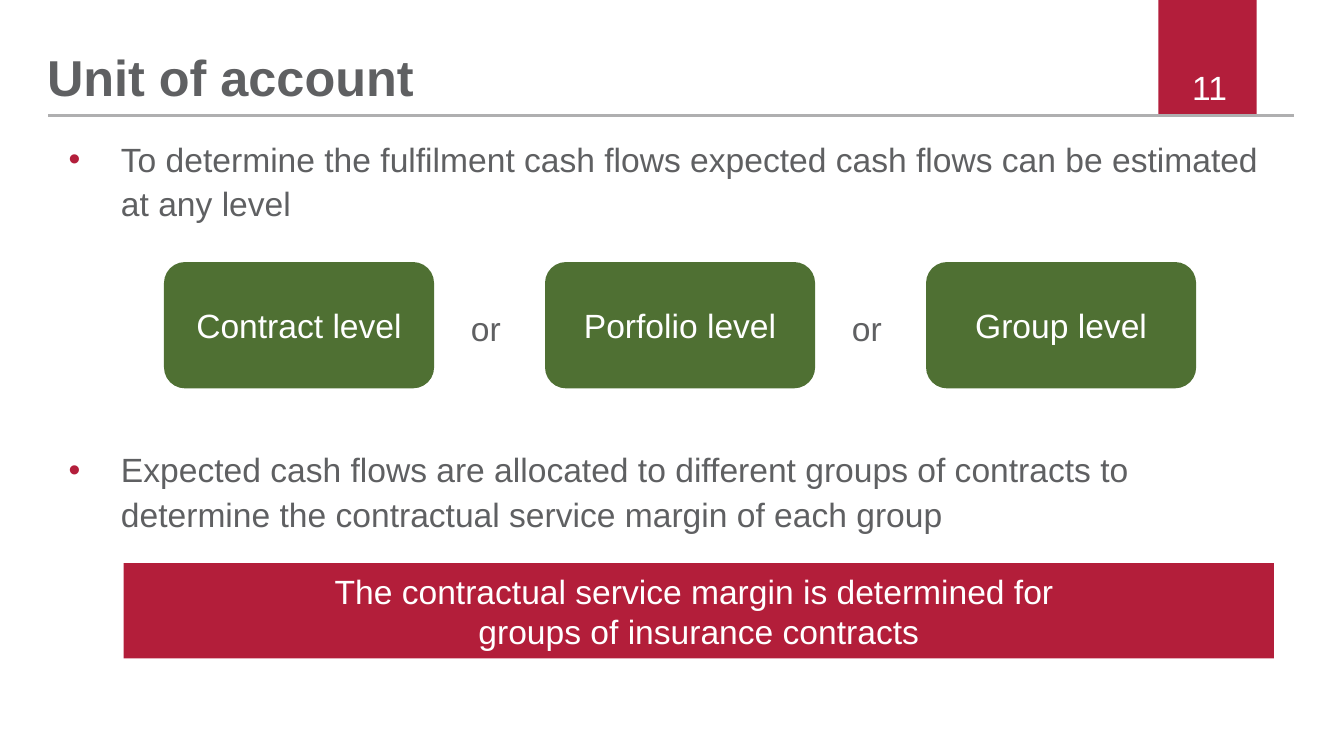
from lxml import etree
from pptx import Presentation
from pptx.dml.color import RGBColor
from pptx.enum.shapes import MSO_CONNECTOR, MSO_SHAPE
from pptx.enum.text import MSO_ANCHOR, MSO_AUTO_SIZE, PP_ALIGN
from pptx.oxml.ns import qn
from pptx.util import Inches, Pt

RECTANGLE, ROUNDED = MSO_SHAPE.RECTANGLE, MSO_SHAPE.ROUNDED_RECTANGLE
LEFT, CENTER, RIGHT = PP_ALIGN.LEFT, PP_ALIGN.CENTER, PP_ALIGN.RIGHT
TOP, MIDDLE, BOTTOM = MSO_ANCHOR.TOP, MSO_ANCHOR.MIDDLE, MSO_ANCHOR.BOTTOM

SLIDE_WIDTH = 10
SLIDE_HEIGHT = SLIDE_WIDTH * 9 / 16

COLORS = {"red": "B31E3B", "banner": "B31E3A", "green": "4F7033",
          "text": "5F6062", "rule": "AFAFB0", "white": "FFFFFF"}
FONT, TEXT_SIZE, TITLE_SIZE = "Arial", 18, 27

LEVELS = ["Contract level", "Porfolio level", "Group level"]
BULLETS = [
    "To determine the fulfilment cash flows expected cash flows can be "
    "estimated at any level",
    "Expected cash flows are allocated to different groups of contracts to "
    "determine the contractual service margin of each group",
]
BULLET_SPACE_BEFORE = [0, 113]  # the second bullet sits below the boxes
BANNER = ["The contractual service margin is determined for ",
          "groups of insurance contracts"]

# Grid of the level boxes, in inches
FIRST_LEFT, LAST_LEFT, GRID_TOP = 1.22, 6.89, 1.95
COLUMN_STEP = (LAST_LEFT - FIRST_LEFT) / (len(LEVELS) - 1)
BOX_WIDTH, BOX_HEIGHT = 2.01, 0.94
OR_OFFSET, OR_TOP = 2.13, 2.24


def color(name):
    return RGBColor.from_string(COLORS[name])


def place(shape, left, top, width, height):
    shape.left, shape.top = Inches(left), Inches(top)
    shape.width, shape.height = Inches(width), Inches(height)


def write(shape, lines, color_name, size=TEXT_SIZE, align=LEFT, anchor=TOP,
          insets=(0, 0), bold=False):
    """Fill a shape with one paragraph per line and return the paragraphs."""
    frame = shape.text_frame
    frame.text = "\n".join(lines)
    frame.word_wrap = True
    frame.auto_size = MSO_AUTO_SIZE.NONE
    frame.vertical_anchor = anchor
    frame.margin_left = frame.margin_right = Inches(insets[0])
    frame.margin_top = frame.margin_bottom = Inches(insets[1])
    for paragraph in frame.paragraphs:
        paragraph.alignment = align
        font = paragraph.font
        font.name, font.size, font.bold = FONT, Pt(size), bold
        font.color.rgb = color(color_name)
    return frame.paragraphs


def add_bullet(paragraph):
    properties = paragraph._p.get_or_add_pPr()
    properties.set("marL", str(Inches(0.39)))
    properties.set("indent", str(-Inches(0.39)))
    bullet_color = etree.Element(qn("a:buClr"))
    etree.SubElement(bullet_color, qn("a:srgbClr"), val=COLORS["red"])
    bullet_font = etree.Element(qn("a:buFont"), typeface=FONT)
    bullet = etree.Element(qn("a:buChar"), char="•")
    # Bullet elements come before the default run properties
    for position, element in enumerate((bullet_color, bullet_font, bullet)):
        properties.insert(position, element)


def add_block(slide, kind, fill, left, top, width, height, lines=()):
    shape = slide.shapes.add_shape(kind, 0, 0, 0, 0)
    place(shape, left, top, width, height)
    shape.shadow.inherit = False
    shape.fill.solid()
    shape.fill.fore_color.rgb = color(fill)
    shape.line.fill.background()
    if lines:
        write(shape, lines, "white", align=CENTER, anchor=MIDDLE,
              insets=(0.07, 0.04))


def add_label(slide, text, color_name, left, top, width, height, **style):
    box = slide.shapes.add_textbox(0, 0, 0, 0)
    place(box, left, top, width, height)
    write(box, [text], color_name, **style)


def add_rule(slide, left, right, top):
    line = slide.shapes.add_connector(
        MSO_CONNECTOR.STRAIGHT, Inches(left), Inches(top), Inches(right), Inches(top))
    line.line.color.rgb = color("rule")
    line.line.width = Pt(1.2)
    etree.SubElement(line._element.spPr, qn("a:effectLst"))


def fill_title(title, text):
    place(title, 0.35, 0, 7.82, 0.8)
    paragraph = write(title, [text], "text", TITLE_SIZE, anchor=BOTTOM, bold=True)[0]
    paragraph.line_spacing = 0.9


def fill_body(body):
    place(body, 0.51, 1, 8.98, 2.58)
    paragraphs = write(body, BULLETS, "text")
    for paragraph, space in zip(paragraphs, BULLET_SPACE_BEFORE):
        add_bullet(paragraph)
        paragraph.line_spacing = 1.1
        paragraph.space_before, paragraph.space_after = Pt(space), Pt(6)


def main():
    presentation = Presentation()
    presentation.slide_width = Inches(SLIDE_WIDTH)
    presentation.slide_height = Inches(SLIDE_HEIGHT)
    slide = presentation.slides.add_slide(presentation.slide_layouts[1])

    # Header with page number
    add_block(slide, RECTANGLE, "red", 8.62, 0, 0.73, 0.86)
    add_rule(slide, 0.36, 9.63, 0.86)
    add_label(slide, "11", "white", 6.89, 0.5, 2.33, 0.3,
              align=RIGHT, anchor=MIDDLE, insets=(0.09, 0.04))

    # Title and bullets
    fill_title(slide.shapes.title, "Unit of account")
    fill_body(slide.placeholders[1])

    # Level boxes, with "or" in the gaps
    for column, level in enumerate(LEVELS):
        left = FIRST_LEFT + column * COLUMN_STEP
        add_block(slide, ROUNDED, "green", left, GRID_TOP, BOX_WIDTH, BOX_HEIGHT, [level])
        if column < len(LEVELS) - 1:
            add_label(slide, "or", "text", left + OR_OFFSET, OR_TOP, 0.53, 0.4,
                      align=CENTER, insets=(0.1, 0.05))

    # Conclusion
    add_block(slide, RECTANGLE, "banner", 0.92, 4.19, 8.56, 0.71, BANNER)

    presentation.save("out.pptx")


if __name__ == "__main__":
    main()
